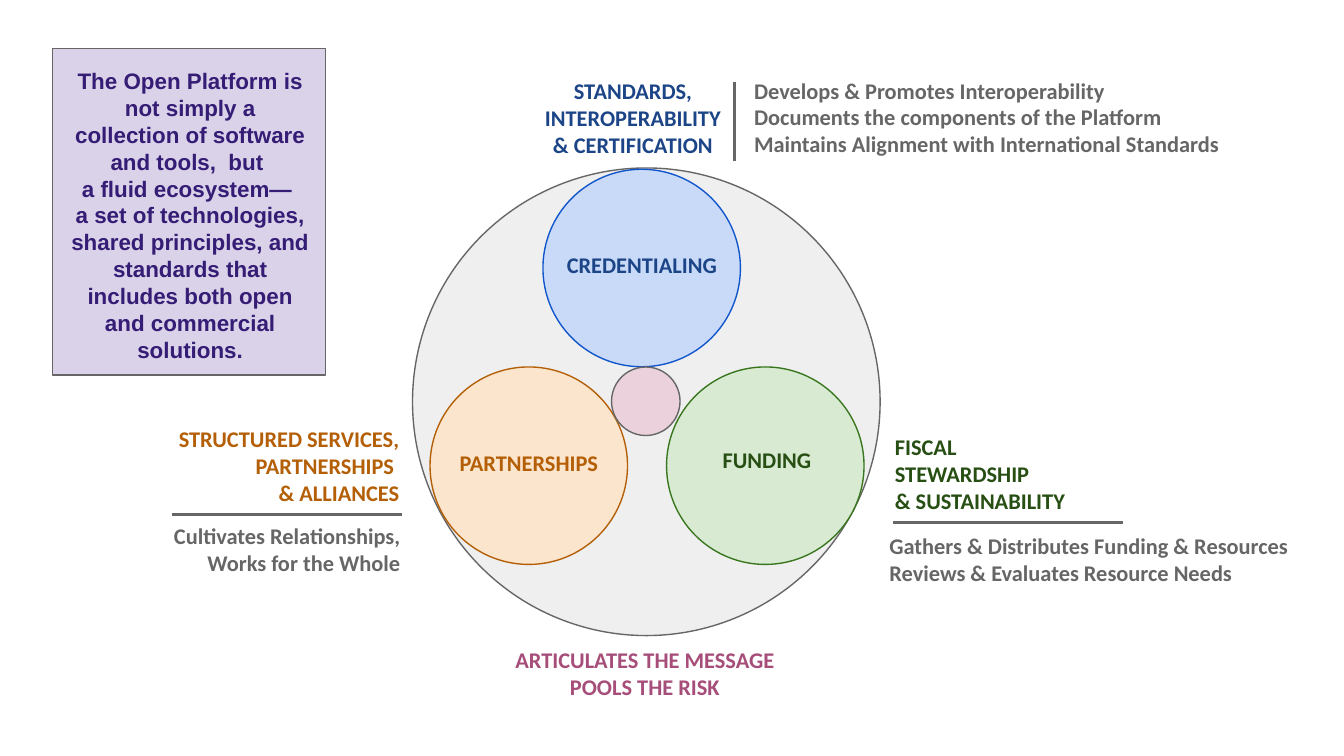
from pptx import Presentation
from pptx.dml.color import RGBColor
from pptx.enum.shapes import MSO_CONNECTOR, MSO_SHAPE
from pptx.enum.text import MSO_ANCHOR, PP_ALIGN
from pptx.oxml.ns import qn
from pptx.util import Pt
from lxml import etree

LEFT, CENTER, RIGHT = PP_ALIGN.LEFT, PP_ALIGN.CENTER, PP_ALIGN.RIGHT
TOP = MSO_ANCHOR.TOP
RECTANGLE, OVAL = MSO_SHAPE.RECTANGLE, MSO_SHAPE.OVAL
STRAIGHT = MSO_CONNECTOR.STRAIGHT

GRAY, BLUE, GREEN, ORANGE = "666666", "1C4587", "274E13", "B45F06"
PURPLE, PLUM = "351C75", "A64D79"


def color(hex_text):
    return RGBColor.from_string(hex_text)


class Page:
    """Draws on one slide in a shared style, with lengths in points."""

    font = "Calibri"
    size = 12
    inset = 7.2
    outline = 0.75
    rule_width = 1.5

    def __init__(self, deck):
        self.shapes = deck.slides.add_slide(deck.slide_layouts[6]).shapes

    def shape(self, kind, left, top, width, height, fill, line=GRAY):
        shape = self.shapes.add_shape(kind, Pt(left), Pt(top), Pt(width), Pt(height))
        shape.shadow.inherit = False
        shape.fill.solid()
        shape.fill.fore_color.rgb = color(fill)
        shape.line.color.rgb = color(line)
        shape.line.width = Pt(self.outline)

    def circle(self, left, top, diameter, fill, line=GRAY):
        self.shape(OVAL, left, top, diameter, diameter, fill, line)

    def rule(self, x1, y1, x2, y2):
        rule = self.shapes.add_connector(STRAIGHT, Pt(x1), Pt(y1), Pt(x2), Pt(y2))
        rule.line.color.rgb = color(GRAY)
        rule.line.width = Pt(self.rule_width)
        etree.SubElement(rule.line._get_or_add_ln().getparent(), qn("a:effectLst"))

    def text(self, text, left, top, width, height, *, ink=GRAY, align=LEFT, font=None):
        """Add bold text; a newline starts a paragraph, a vertical tab breaks a line."""
        box = self.shapes.add_textbox(Pt(left), Pt(top), Pt(width), Pt(height))
        frame = box.text_frame
        frame.word_wrap = True
        frame.vertical_anchor = TOP
        frame.margin_left = frame.margin_right = Pt(self.inset)
        frame.margin_top = frame.margin_bottom = Pt(self.inset)
        frame.text = text
        for para in frame.paragraphs:
            para.alignment = align
            for span in para.runs:
                span.font.name = font or self.font
                span.font.size = Pt(self.size)
                span.font.bold = True
                span.font.color.rgb = color(ink)


def draw_circles(page):
    diameter, middle = 105.8, 196.6
    page.circle(221, 90, 250.5, "EFEFEF")
    page.circle(290.9, 90.7, diameter, "C9DAF8", "1155CC")
    page.circle(357.1, middle, diameter, "D9EAD3", "38761D")
    page.circle(230.4, middle, diameter, "FCE5CD", ORANGE)
    page.circle(327.6, middle, 36.7, "EAD1DC")
    page.text("PARTNERSHIPS", 226.8, 233.3, 100.8, 22.3, ink=ORANGE, align=RIGHT)
    page.text("CREDENTIALING", 296.4, 127.6, 95, 26, ink=BLUE, align=CENTER)
    page.text("FUNDING", 380, 231.7, 68.4, 31.7, ink=GREEN)


def draw_roles(page):
    height = 42.5
    page.text("STRUCTURED SERVICES,\nPARTNERSHIPS \n& ALLIANCES",
              83.5, 220.5, 137.5, height, ink=ORANGE, align=RIGHT)
    page.text("Cultivates Relationships,\nWorks for the Whole",
              75.6, 272.7, 146, height, align=RIGHT)
    page.rule(92.2, 275.8, 215.3, 275.8)

    page.text("STANDARDS,\nINTEROPERABILITY\n& CERTIFICATION",
              280.8, 34.3, 116.6, height, ink=BLUE, align=CENTER)
    page.text("Develops & Promotes Interoperability\v"
              "Documents the components of the Platform\n"
              "Maintains Alignment with International Standards",
              396.9, 33.9, 268.6, height)
    page.rule(393.3, 86.4, 393.3, 43.9)

    page.text("FISCAL\nSTEWARDSHIP\n& SUSTAINABILITY",
              472.3, 225, 116.6, height, ink=GREEN)
    page.text("Gathers & Distributes Funding & Resources\n"
              "Reviews & Evaluates Resource Needs",
              469.4, 278, 245, height)
    page.rule(478.6, 280, 601.7, 280)

    page.text("ARTICULATES THE MESSAGE\vPOOLS THE RISK",
              262, 339, 167, height, ink=PLUM, align=CENTER)


def main():
    deck = Presentation()
    deck.slide_width, deck.slide_height = Pt(720), Pt(405)
    page = Page(deck)
    page.shape(RECTANGLE, 28.1, 25.9, 146.2, 175, "D9D2E9")
    page.text("The Open Platform is not simply a collection of software and tools,  but \n"
              "a fluid ecosystem— \n"
              "a set of technologies, shared principles, and standards that "
              "includes both open and commercial solutions.",
              31, 28.8, 141.8, 47.5, ink=PURPLE, align=CENTER, font="Arial")
    draw_circles(page)
    draw_roles(page)
    deck.save("out.pptx")


if __name__ == "__main__":
    main()
